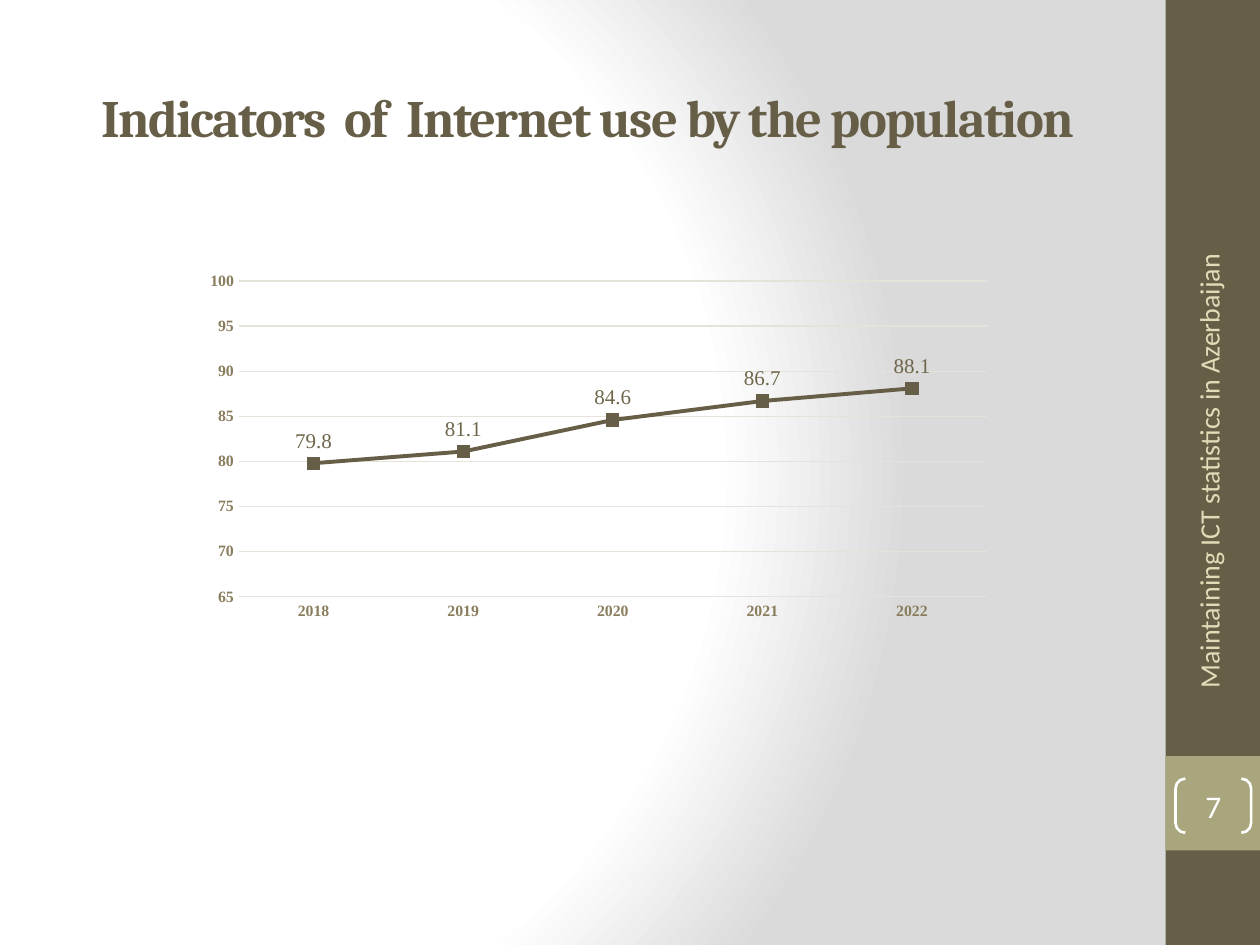
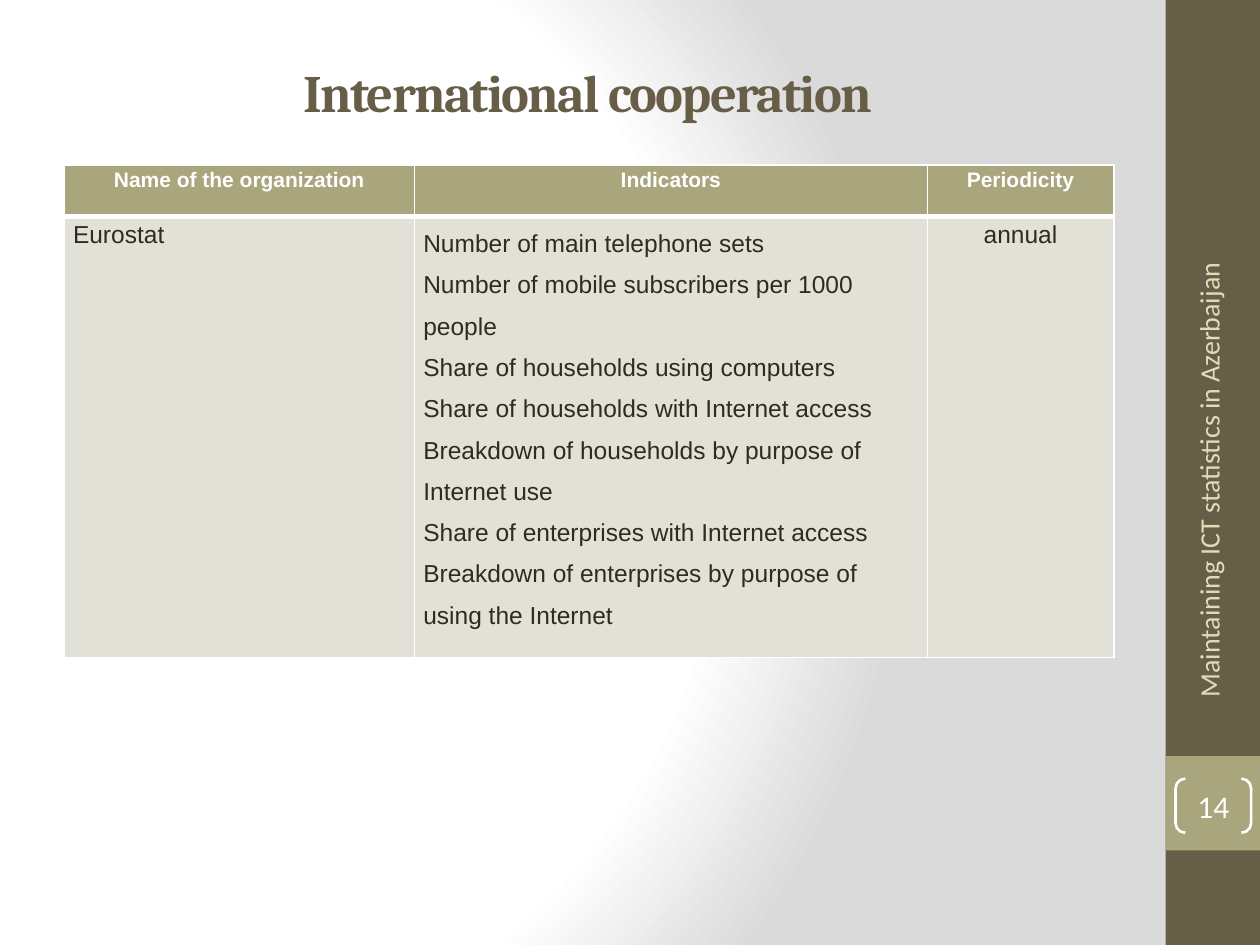
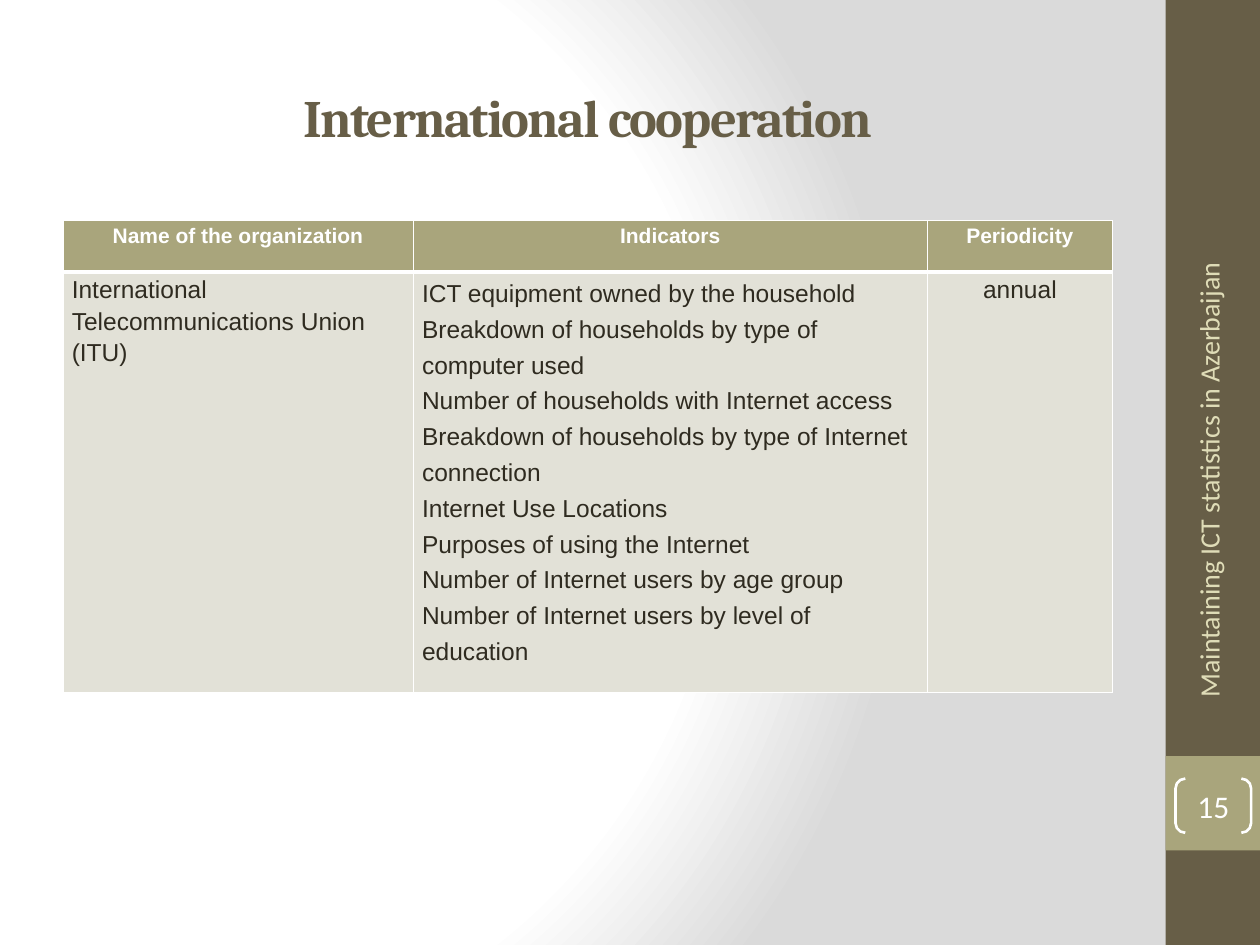
from pptx import Presentation
from pptx.chart.data import CategoryChartData as ChartData
from pptx.dml.color import RGBColor
from pptx.enum.chart import XL_CHART_TYPE as Kind, XL_LABEL_POSITION as Spot
from pptx.enum.chart import XL_MARKER_STYLE as Mark, XL_TICK_MARK as Tick
from pptx.enum.shapes import MSO_SHAPE as Form
from pptx.enum.text import MSO_ANCHOR as Anchor, PP_ALIGN as Align
from pptx.oxml import parse_xml
from pptx.oxml.ns import nsdecls, qn
from pptx.util import Inches, Pt

DARK, OLIVE, CREAM, WHITE = "675E47", "A9A57C", "DFDCB7", "FFFFFF"
INK, PALE, GRID, TAN, LABEL = "2F2B20", "E2E1D7", "E5E2D9", "897D5D", "6F664C"


def hue(code):
    return RGBColor.from_string(code)


def write(frame, text, size, face, color, bold=False, align=Align.CENTER, gap=1.0):
    frame.text = text
    frame.word_wrap = True
    for para in frame.paragraphs:
        para.alignment = align
        para.line_spacing = gap
        for run in para.runs:
            font = run.font
            font.size, font.name, font.bold = Pt(size), face, bold
            font.color.rgb = hue(color)


deck = Presentation()
deck.slide_width, deck.slide_height = Inches(10), Inches(7.5)

master = deck.slide_master
master.background.fill.gradient()
old = master.element.find(".//" + qn("a:gradFill"))
stops = "".join(
    f'<a:gs pos="{pos}000"><a:srgbClr val="{code}"/></a:gs>'
    for pos, code in [(0, WHITE), (75, WHITE), (100, "DADADA")]
)
old.getparent().replace(old, parse_xml(
    f'<a:gradFill {nsdecls("a")} rotWithShape="1"><a:gsLst>{stops}</a:gsLst>'
    '<a:path path="circle"><a:fillToRect l="20000" t="50000" r="100000" b="50000"/>'
    '</a:path></a:gradFill>'
))

pages = [
    ("Indicators  of  Internet use by the population", 1.25, "7", 5.55),
    ("International cooperation", 0.85, "14", 5.62),
    ("International cooperation", 1.25, "15", 5.62),
]
slides = []
for title, tall, number, end in pages:
    slide = deck.slides.add_slide(deck.slide_layouts[6])
    slides.append(slide)
    shapes = slide.shapes

    for top, height, color in [(0, 7.5, DARK), (6, 0.75, OLIVE)]:
        band = shapes.add_shape(
            Form.RECTANGLE, Inches(9.25), Inches(top), Inches(0.75), Inches(height))
        band.shadow.inherit = False
        band.fill.solid()
        band.fill.fore_color.rgb = hue(color)
        band.line.fill.background()

    head = shapes.add_textbox(Inches(0.5), Inches(0.3), Inches(8.33), Inches(tall))
    frame = head.text_frame
    frame.vertical_anchor = Anchor.MIDDLE
    write(frame, title, 30, "Cambria", DARK, True)
    frame.paragraphs[0].runs[0].font.language_id = None
    frame.paragraphs[0].runs[0]._r.get_or_add_rPr().set("spc", "-100")

    badge = shapes.add_shape(
        Form.DOUBLE_BRACKET, Inches(9.33), Inches(6.18), Inches(0.6), Inches(0.43))
    badge.adjustments[0] = 0.18
    badge.shadow.inherit = False
    badge.fill.background()
    badge.line.color.rgb = hue(WHITE)
    badge.line.width = Pt(1.5)
    frame = badge.text_frame
    frame.margin_left = frame.margin_right = frame.margin_top = frame.margin_bottom = 0
    frame.vertical_anchor = Anchor.MIDDLE
    write(frame, number, 18, "Calibri", WHITE)

    wide = 2 * (end - 3.54 + 0.2) if number == "7" else 4.22
    wide = 4.37 if number == "7" else 4.22
    side = shapes.add_textbox(
        Inches(9.59 - wide / 2), Inches(end - 1.81), Inches(wide), Inches(0.4))
    side.top = Inches(3.54 if number == "7" else 3.61)
    side.rotation = 270
    side.text_frame.vertical_anchor = Anchor.MIDDLE
    write(side.text_frame, "Maintaining ICT statistics in Azerbaijan", 16, "Calibri", CREAM)

data = ChartData()
data.categories = ["2018", "2019", "2020", "2021", "2022"]
data.add_series("Series 1", [79.8, 81.1, 84.6, 86.7, 88.1])
chart = slides[0].shapes.add_chart(
    Kind.LINE_MARKERS, Inches(1.54), Inches(2.1), Inches(6.42), Inches(2.88), data).chart
chart.has_title = chart.has_legend = False
chart.font.size, chart.font.name = Pt(10), "Times New Roman"
chart.font.color.rgb = hue(INK)

years, scale = chart.category_axis, chart.value_axis
for axis in (years, scale):
    axis.major_tick_mark = axis.minor_tick_mark = Tick.NONE
    font = axis.tick_labels.font
    font.size, font.name, font.bold = Pt(9), "Times New Roman", True
    font.color.rgb = hue(TAN)
scale.minimum_scale, scale.maximum_scale, scale.major_unit = 65, 100, 5
scale.format.line.fill.background()
scale.has_major_gridlines = True
for line in (years.format.line, scale.major_gridlines.format.line):
    line.color.rgb = hue(GRID)
    line.width = Pt(0.75)

plot = chart.plots[0]
plot.vary_by_categories = False
trend = plot.series[0]
trend.smooth = False
trend.format.line.color.rgb = hue(DARK)
trend.format.line.width = Pt(2.25)
trend.marker.style, trend.marker.size = Mark.SQUARE, 7
trend.marker.format.fill.solid()
trend.marker.format.fill.fore_color.rgb = hue(DARK)
trend.marker.format.line.color.rgb = hue(DARK)
labels = trend.data_labels
labels.show_value = True
labels.position = Spot.ABOVE
labels.font.size, labels.font.name = Pt(12), "Times New Roman"
labels.font.color.rgb = hue(LABEL)

heads = ["Name of the organization", "Indicators", "Periodicity"]
euro = [
    "Number of main telephone sets",
    "Number of mobile subscribers per 1000 people",
    "Share of households using computers",
    "Share of households with Internet access",
    "Breakdown of households by purpose of Internet use",
    "Share of enterprises with Internet access",
    "Breakdown of enterprises by purpose of using the Internet",
]
union = [
    "ICT equipment owned by the household",
    "Breakdown of households by type of computer used",
    "Number of households with Internet access",
    "Breakdown of households by type of Internet connection",
    "Internet Use Locations",
    "Purposes of using the Internet",
    "Number of Internet users by age group",
    "Number of Internet users by level of education",
]
tables = [
    (slides[1], 0.51, 1.31, [2.78, 4.07, 1.48], "Eurostat", euro, 1.5),
    (slides[2], 0.5, 1.75, [2.78, 4.08, 1.47],
     "International Telecommunications Union (ITU)", union, 1.3),
]
for slide, left, top, widths, group, items, gap in tables:
    table = slide.shapes.add_table(
        2, 3, Inches(left), Inches(top), Inches(8.33), Inches(0.82)).table
    table.horz_banding = False
    for col, width in zip(table.columns, widths):
        col.width = Inches(width)
    for r, texts in enumerate([heads, [group, "\n".join(items), "annual"]]):
        for c, text in enumerate(texts):
            cell = table.cell(r, c)
            cell.margin_left = cell.margin_right = Inches(0.07)
            cell.margin_top = cell.margin_bottom = 0
            props = cell._tc.get_or_add_tcPr()
            for edge in "LRTB":
                thick = 3 if (r, edge) in [(0, "B"), (1, "T")] else 1
                props.append(parse_xml(
                    f'<a:ln{edge} {nsdecls("a")} w="{Pt(thick)}"><a:solidFill>'
                    f'<a:srgbClr val="{WHITE}"/></a:solidFill></a:ln{edge}>'))
            cell.fill.solid()
            cell.fill.fore_color.rgb = hue(PALE if r else OLIVE)
            size, color = (14, INK) if r else (12, WHITE)
            align = Align.LEFT if r and c < 2 else Align.CENTER
            space = gap if r and c == 1 else 1.15
            write(cell.text_frame, text, size, "Arial", color, not r, align, space)

deck.save("out.pptx")
